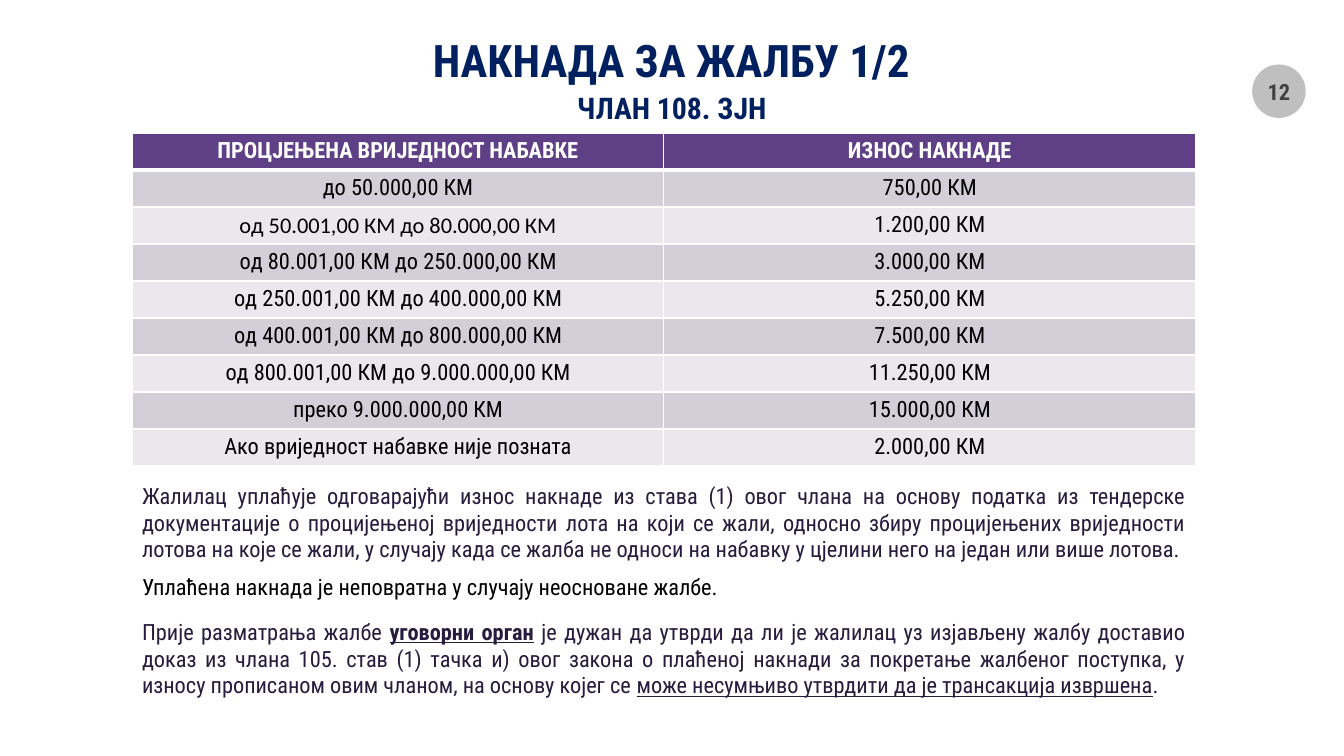
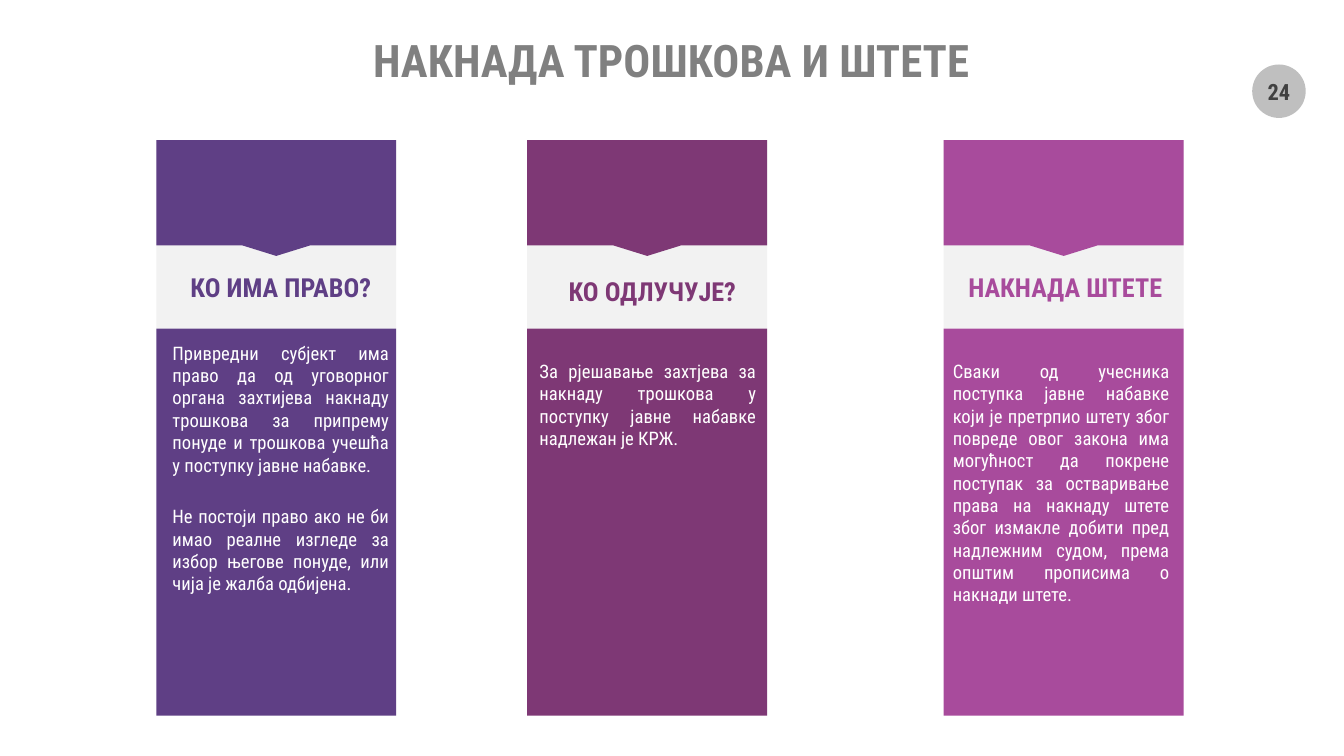
from dataclasses import dataclass
from typing import NamedTuple

from lxml import etree
from pptx import Presentation
from pptx.dml.color import RGBColor
from pptx.enum.shapes import MSO_SHAPE as SHAPE
from pptx.enum.text import MSO_ANCHOR as ANCHOR, MSO_AUTO_SIZE as AUTO, PP_ALIGN as ALIGN
from pptx.oxml.ns import qn
from pptx.util import Inches, Pt

SLIDE_W, SLIDE_H = Inches(13.33), Inches(7.5)
FONT = "Roboto Condensed"
COLORS = {
    "white": "FFFFFF", "black": "000000", "navy": "002060", "gray": "808080",
    "badge": "BFBFBF", "number": "404040", "ink": "261C3D", "panel": "F2F2F2",
    "purple": "5F3F85", "plum": "7E3875", "orchid": "A84B9C",
    "band_dark": "D2CFD9", "band_light": "EAE8ED",
}


class Box(NamedTuple):
    """Left, top, width and height in percent of the slide's size."""
    left: float
    top: float
    width: float
    height: float

    def emu(self) -> tuple[int, ...]:
        sides = (SLIDE_W, SLIDE_H, SLIDE_W, SLIDE_H)
        return tuple(round(side * share / 100) for side, share in zip(sides, self))


class Span(NamedTuple):
    text: str
    bold: bool = False
    underline: bool = False


@dataclass(frozen=True)
class Style:
    size: float
    color: str
    bold: bool = False
    align: ALIGN = ALIGN.CENTER
    font: str = FONT


@dataclass(frozen=True)
class Card:
    color: str
    left: float
    heading: str
    heading_box: Box
    body_box: Box
    paragraphs: tuple[str, ...]


BADGE = Box(93.17, 8.53, 3.98, 7.07)
TITLE = Box(23.93, 3.87, 52.06, 8.13)
SUBTITLE = Box(35.78, 12.27, 28.43, 3.87)
CONTENT_LEFT, CONTENT_W = 9.83, 79.14
TABLE = Box(CONTENT_LEFT, 17.6, CONTENT_W, 40.8)
CARD_W, CARD_TOP, BODY_TOP, CARD_BOTTOM = 17.85, 18.53, 43.47, 94.67
CALLOUT_H = 15.33
CALLOUT_ADJUSTMENTS = (0.5, 0.29, 0.09, 0.91)

FEES = (
    ("ПРОЦЈЕЊЕНА ВРИЈЕДНОСТ НАБАВКЕ", "ИЗНОС НАКНАДЕ"),
    ("дo 50.000,00 КМ", "750,00 КМ"),
    ("oд 50.001,00 КМ до 80.000,00 КМ", "1.200,00 КМ"),
    ("oд 80.001,00 КМ до 250.000,00 КМ", "3.000,00 КМ"),
    ("oд 250.001,00 КМ до 400.000,00 КМ", "5.250,00 КМ"),
    ("oд 400.001,00 КМ до 800.000,00 КМ", "7.500,00 КМ"),
    ("oд 800.001,00 КМ до 9.000.000,00 КМ", "11.250,00 КМ"),
    ("преко 9.000.000,00 КМ", "15.000,00 КМ"),
    ("Ако вриједност набавке није позната", "2.000,00 КМ"),
)
CALIBRI_CELL = (2, 0)

RULES = (
    (63.07, 12.13, Style(16, "ink", align=ALIGN.JUSTIFY), (
        Span("Жалилац уплаћује одговарајући износ накнаде из става (1) овог члана на "
             "основу податка из тендерске документације о процијењеној вриједности лота "
             "на који се жали, односно збиру процијењених вриједности лотова на које се "
             "жали, у случају када се жалба не односи на набавку у цјелини него на један "
             "или више лотова."),)),
    (75.2, 4.93, Style(16, "black", align=ALIGN.LEFT), (
        Span("Уплаћена накнада је неповратна у случају неосноване жалбе."),)),
    (81.07, 12.13, Style(16, "ink", align=ALIGN.JUSTIFY), (
        Span("Прије разматрања жалбе "),
        Span("уговорни орган", bold=True, underline=True),
        Span(" је дужан да утврди да ли је жалилац уз изјављену жалбу доставио доказ из "
             "члана 105. став (1) тачка и) овог закона о плаћеној накнади за покретање "
             "жалбеног поступка, у износу прописаном овим чланом, на основу којег се "),
        Span("може несумњиво утврдити да је трансакција извршена", underline=True),
        Span("."))),
)

CARDS = (
    Card("purple", 11.63, "КО ИМА ПРАВО?",
         Box(13.28, 35.2, 15.23, 5.6), Box(12.83, 45.2, 16.13, 34.13),
         ("Привредни субјект има право да од уговорног органа захтијева накнаду трошкова "
          "за припрему понуде и трошкова учешћа у поступку јавне набавке.",
          "Не постоји право ако не би имао реалне изгледе за избор његове понуде, или "
          "чија је жалба одбијена.")),
    Card("plum", 39.23, "КО ОДЛУЧУЈЕ?",
         Box(41.49, 35.73, 14.1, 5.6), Box(40.14, 47.6, 16.13, 12),
         ("За рјешавање захтјева за накнаду трошкова у поступку јавне набавке надлежан "
          "је КРЖ.",)),
    Card("orchid", 70.22, "НАКНАДА ШТЕТЕ",
         Box(71.27, 35.2, 15.98, 5.6), Box(70.89, 47.6, 16.13, 32.93),
         ("Сваки од учесника поступка јавне набавке који је претрпио штету због повреде "
          "овог закона има могућност да покрене поступак за остваривање права на накнаду "
          "штете због измакле добити пред надлежним судом, према општим прописима о "
          "накнади штете.",)),
)


def rgb(name: str) -> RGBColor:
    return RGBColor.from_string(COLORS[name])


def style_paragraph(p, style: Style) -> None:
    p.alignment = style.align
    p.font.size, p.font.name, p.font.bold = Pt(style.size), style.font, style.bold
    p.font.color.rgb = rgb(style.color)


def clear_margins(tf) -> None:
    tf.margin_left = tf.margin_top = tf.margin_right = tf.margin_bottom = 0


def add_text(slide, box: Box, paragraphs, style: Style, inset: bool = True,
             wrap: bool = True, gap: float = 0):
    """Add a text box; each paragraph is a sequence of spans, gap parts them in points."""
    tf = slide.shapes.add_textbox(*box.emu()).text_frame
    tf.word_wrap = wrap
    if not inset:
        clear_margins(tf)
    for i, spans in enumerate(paragraphs):
        p = tf.add_paragraph() if i else tf.paragraphs[0]
        style_paragraph(p, style)
        if i:
            p.space_before = Pt(gap)
        for span in spans:
            r = p.add_run()
            r.text = span.text
            if span.bold:
                r.font.bold = True
            if span.underline:
                r.font.underline = True
    return tf


def add_filled(shapes, kind: SHAPE, box: Box, color: str):
    sp = shapes.add_shape(kind, *box.emu())
    sp.shadow.inherit = False
    sp.fill.solid()
    sp.fill.fore_color.rgb = rgb(color)
    sp.line.fill.background()
    return sp


def add_heading(slide, box: Box, text: str, style: Style, wrap: bool) -> None:
    tf = add_text(slide, box, [[Span(text)]], style, inset=False, wrap=wrap)
    tf.vertical_anchor = ANCHOR.MIDDLE


def new_slide(prs, title: str, color: str, number: int):
    slide = prs.slides.add_slide(prs.slide_layouts[6])
    tf = add_filled(slide.shapes, SHAPE.OVAL, BADGE, "badge").text_frame
    clear_margins(tf)
    tf.word_wrap = False
    tf.vertical_anchor = ANCHOR.MIDDLE
    p = tf.paragraphs[0]
    p.text = str(number)
    style_paragraph(p, Style(16, "number", bold=True))
    add_heading(slide, TITLE, title, Style(32, color, bold=True), wrap=False)
    return slide


def set_borders(cell, header: bool) -> None:
    """White rules of 1 pt, with 3 pt below the header."""
    tc_pr = cell._tc.get_or_add_tcPr()
    for i, side in enumerate(("lnL", "lnR", "lnT", "lnB")):
        width = Pt(3) if header and side == "lnB" else Pt(1)
        ln = etree.Element(qn(f"a:{side}"), w=str(width))
        fill = etree.SubElement(ln, qn("a:solidFill"))
        etree.SubElement(fill, qn("a:srgbClr"), val=COLORS["white"])
        tc_pr.insert(i, ln)


def add_fee_table(slide) -> None:
    table = slide.shapes.add_table(len(FEES), len(FEES[0]), *TABLE.emu()).table
    for i, row in enumerate(FEES):
        header = i == 0
        band = "purple" if header else ("band_light", "band_dark")[i % 2]
        for j, text in enumerate(row):
            cell = table.cell(i, j)
            cell.fill.solid()
            cell.fill.fore_color.rgb = rgb(band)
            set_borders(cell, header)
            p = cell.text_frame.paragraphs[0]
            p.text = text
            font = "Calibri" if (i, j) == CALIBRI_CELL else FONT
            style_paragraph(p, Style(16, "white" if header else "black", header, font=font))


def add_card(slide, card: Card) -> None:
    shapes = slide.shapes.add_group_shape().shapes
    add_filled(shapes, SHAPE.RECTANGLE,
               Box(card.left, CARD_TOP, CARD_W, BODY_TOP - CARD_TOP), "panel")
    callout = add_filled(shapes, SHAPE.DOWN_ARROW_CALLOUT,
                         Box(card.left, CARD_TOP, CARD_W, CALLOUT_H), card.color)
    for i, value in enumerate(CALLOUT_ADJUSTMENTS):
        callout.adjustments[i] = value
    add_filled(shapes, SHAPE.RECTANGLE,
               Box(card.left, BODY_TOP, CARD_W, CARD_BOTTOM - BODY_TOP), card.color)
    body = add_text(slide, card.body_box, [[Span(text)] for text in card.paragraphs],
                    Style(13.3, "white", align=ALIGN.JUSTIFY), inset=False, gap=21)
    heading = add_text(slide, card.heading_box, [[Span(card.heading)]],
                       Style(18.7, card.color, bold=True), wrap=False)
    body.auto_size = heading.auto_size = AUTO.SHAPE_TO_FIT_TEXT


def build_fee_slide(prs) -> None:
    slide = new_slide(prs, "НАКНАДА ЗА ЖАЛБУ 1/2", "navy", 12)
    add_heading(slide, SUBTITLE, "ЧЛАН 108. ЗЈН", Style(21.3, "navy", bold=True), wrap=True)
    add_fee_table(slide)
    for top, height, style, spans in RULES:
        tf = add_text(slide, Box(CONTENT_LEFT, top, CONTENT_W, height), [spans], style)
        tf.auto_size = AUTO.SHAPE_TO_FIT_TEXT


def build_damages_slide(prs) -> None:
    slide = new_slide(prs, "НАКНАДА ТРОШКОВА И ШТЕТЕ", "gray", 24)
    for card in CARDS:
        add_card(slide, card)


def main() -> None:
    prs = Presentation()
    prs.slide_width, prs.slide_height = SLIDE_W, SLIDE_H
    build_fee_slide(prs)
    build_damages_slide(prs)
    prs.save("out.pptx")


if __name__ == "__main__":
    main()
